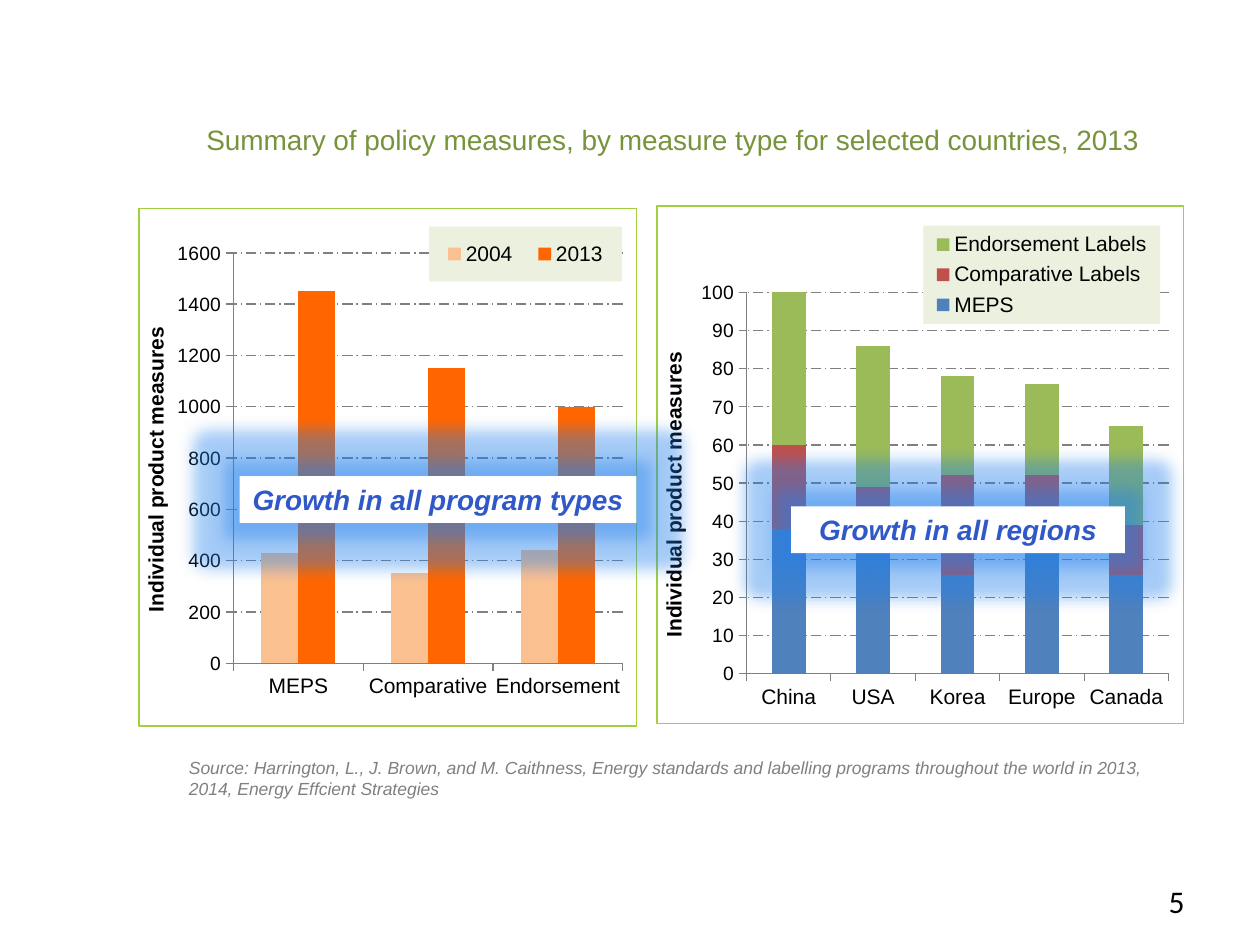
from lxml import etree
from pptx import Presentation
from pptx import util as u
from pptx.chart.data import CategoryChartData
from pptx.dml.color import RGBColor
from pptx.enum import chart as ch, dml, shapes, text
from pptx.oxml import ns

FONT = "Arial"
BLACK, GREY = "000000", "808080"
AXIS_TITLE = "Individual product measures"


def rgb(value):
    return RGBColor.from_string(value)


def box(*lengths):
    return [u.Cm(n) for n in lengths]


def style(font, size, color=BLACK, name=FONT, bold=False, italic=False):
    font.size, font.name = u.Pt(size), name
    font.bold, font.italic = bold, italic
    font.color.rgb = rgb(color)


def write(sp, content, align=text.PP_ALIGN.LEFT, **look):
    tf = sp.text_frame
    tf.word_wrap = True
    tf.text = content
    p = tf.paragraphs[0]
    p.alignment = align
    style(p.runs[0].font, **look)
    return tf


def add_text(slide, content, place, **look):
    return write(slide.shapes.add_textbox(*box(*place)), content, **look)


def add_callout(slide, content, place):
    """White label with a blue glow around it."""
    sp = slide.shapes.add_shape(shapes.MSO_SHAPE.RECTANGLE, *box(*place))
    sp.fill.solid()
    sp.fill.fore_color.rgb = rgb("FFFFFF")
    sp.line.fill.background()
    sp.shadow.inherit = False
    effects = sp.element.spPr.find(ns.qn("a:effectLst"))
    glow = etree.SubElement(effects, ns.qn("a:glow"), rad=str(u.Pt(18)))
    color = etree.SubElement(glow, ns.qn("a:srgbClr"), val="207FEB")
    etree.SubElement(color, ns.qn("a:alpha"), val="40000")
    write(sp, content, align=text.PP_ALIGN.CENTER, size=16, color="3059C7",
          bold=True, italic=True)


def layout(place, inner=False):
    """Manual chart layout from fractions x, y, w, h."""
    root = etree.Element(ns.qn("c:layout"))
    manual = etree.SubElement(root, ns.qn("c:manualLayout"))
    items = [("layoutTarget", "inner")] if inner else []
    items += [("xMode", "edge"), ("yMode", "edge")]
    items += zip("xywh", map(str, place))
    for tag, val in items:
        etree.SubElement(manual, ns.qn("c:" + tag), val=val)
    return root


def shape_props(fill=None, line=None):
    sp_pr = etree.Element(ns.qn("c:spPr"))
    parent = sp_pr
    if line:
        parent = etree.SubElement(sp_pr, ns.qn("a:ln"), w=str(u.Pt(0.75)))
    solid = etree.SubElement(parent, ns.qn("a:solidFill"))
    etree.SubElement(solid, ns.qn("a:srgbClr"), val=line or fill)
    return sp_pr


def format_axis(axis, size):
    axis.major_tick_mark = ch.XL_TICK_MARK.OUTSIDE
    axis.minor_tick_mark = ch.XL_TICK_MARK.NONE
    axis.format.line.color.rgb = rgb(GREY)
    axis.format.line.width = u.Pt(0.75)
    style(axis.tick_labels.font, size)


def format_value_axis(axis, top, step):
    format_axis(axis, 11)
    axis.minimum_scale, axis.maximum_scale, axis.major_unit = 0, top, step
    axis.has_major_gridlines = True
    line = axis.major_gridlines.format.line
    line.color.rgb = rgb(GREY)
    line.width = u.Pt(0.75)
    line.dash_style = dml.MSO_LINE.LONG_DASH_DOT
    tf = axis.axis_title.text_frame
    tf.text = AXIS_TITLE
    style(tf.paragraphs[0].runs[0].font, 12, bold=True)


def place_parts(chart, plot, legend):
    """Frame the chart and fix its plot area and legend."""
    root = chart.element
    body = root.find(ns.qn("c:chart"))
    body.addnext(shape_props(line="A0CF40"))
    area = body.find(ns.qn("c:plotArea"))
    key = body.find(ns.qn("c:legend"))
    for parent in (area, key):
        for old in parent.findall(ns.qn("c:layout")):
            parent.remove(old)
    area.insert(0, layout(plot, inner=True))
    key.find(ns.qn("c:legendPos")).addnext(layout(legend))
    key.find(ns.qn("c:overlay")).addnext(shape_props(fill="EBF1DE"))


def add_columns(slide, kind, place, cats, series, top, step, plot, legend):
    data = CategoryChartData()
    data.categories = cats
    for name, values, _ in series:
        data.add_series(name, values)
    chart = slide.shapes.add_chart(kind, *box(*place), data).chart
    chart.has_title = False
    style(chart.font, 14)
    format_axis(chart.category_axis, 12)
    format_value_axis(chart.value_axis, top, step)
    bars = chart.plots[0]
    bars.gap_width = 150
    bars.overlap = 100 if kind == ch.XL_CHART_TYPE.COLUMN_STACKED else 0
    bars.vary_by_categories = False
    for ser, (_, _, color) in zip(bars.series, series):
        ser.format.fill.solid()
        ser.format.fill.fore_color.rgb = rgb(color)
    chart.has_legend = True
    chart.legend.position = ch.XL_LEGEND_POSITION.RIGHT
    chart.legend.include_in_layout = True
    style(chart.legend.font, 12)
    place_parts(chart, plot, legend)


def main():
    prs = Presentation()
    prs.slide_width, prs.slide_height = box(25.4, 19.05)
    slide = prs.slides.add_slide(prs.slide_layouts[6])

    tf = add_text(slide, "5", (18.21, 17.65, 5.92, 1.02), size=18,
                  name="Calibri", align=text.PP_ALIGN.RIGHT)
    tf.vertical_anchor = text.MSO_ANCHOR.MIDDLE
    add_columns(
        slide, ch.XL_CHART_TYPE.COLUMN_STACKED, (13.23, 4.14, 10.64, 10.46),
        ["China", "USA", "Korea", "Europe", "Canada"],
        [("MEPS", (38, 32, 26, 32, 26), "4F81BD"),
         ("Comparative Labels", (22, 17, 26, 20, 13), "C0504D"),
         ("Endorsement Labels", (40, 37, 26, 24, 26), "9BBB59")],
        top=100, step=10, plot=(0.17, 0.167, 0.802, 0.737),
        legend=(0.506, 0.038, 0.45, 0.19))
    add_text(slide, "Summary of policy measures, by measure type for "
             "selected countries, 2013", (3.91, 2.34, 19.61, 0.94),
             size=16, color="77933C")
    add_text(slide, "Source: Harrington, L., J. Brown, and M. Caithness, "
             "Energy standards and labelling programs throughout the world "
             "in 2013, 2014, Energy Effcient Strategies",
             (3.56, 15.14, 19.96, 1.12), size=10, color=GREY, italic=True)
    add_columns(
        slide, ch.XL_CHART_TYPE.COLUMN_CLUSTERED, (2.79, 4.19, 10.06, 10.46),
        ["MEPS", "Comparative", "Endorsement"],
        [("2004", (430, 350, 440), "FAC090"),
         ("2013", (1450, 1150, 1000), "FF6600")],
        top=1600, step=200, plot=(0.19, 0.086, 0.782, 0.793),
        legend=(0.583, 0.035, 0.387, 0.106))
    add_callout(slide, "Growth in all program types", (4.83, 9.6, 8, 0.94))
    add_callout(slide, "Growth in all regions", (15.95, 10.21, 6.73, 0.94))
    prs.save("out.pptx")


if __name__ == "__main__":
    main()
